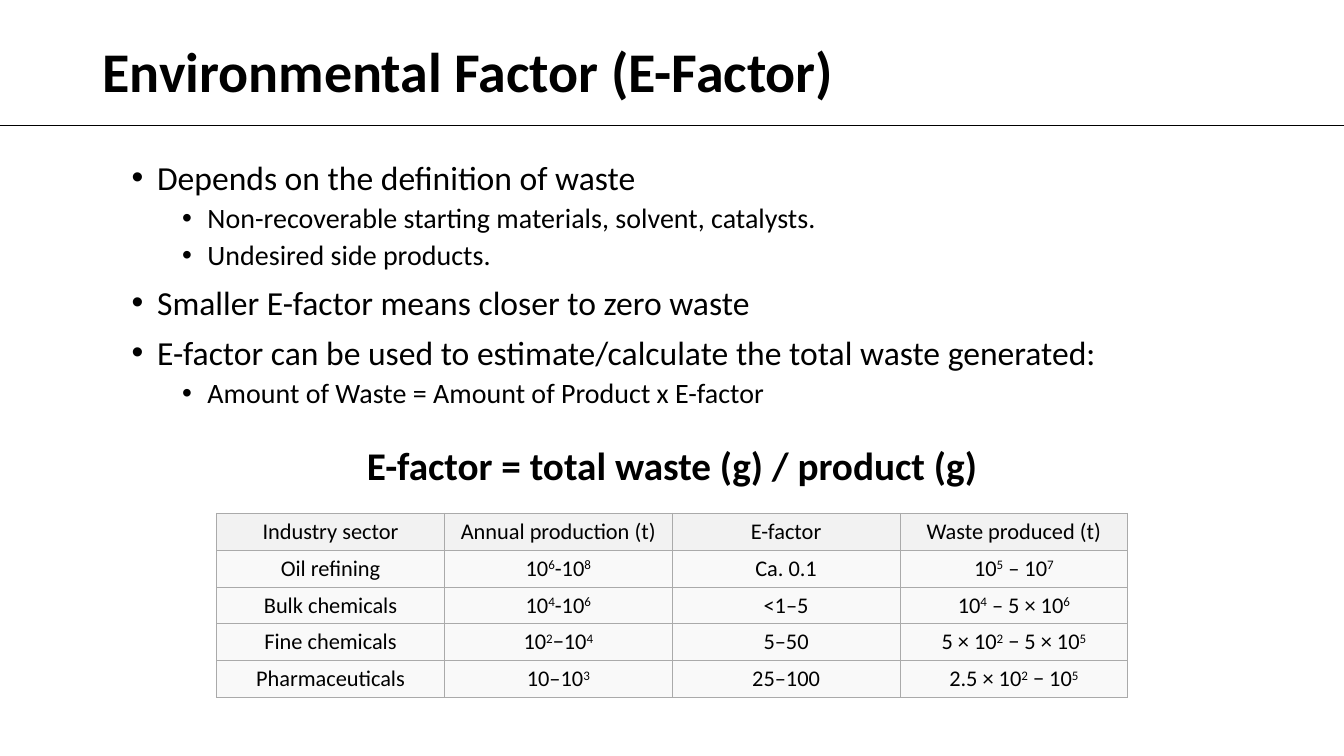
from dataclasses import dataclass

from lxml.etree import SubElement
from pptx import Presentation
from pptx.dml.color import RGBColor
from pptx.enum.shapes import MSO_CONNECTOR
from pptx.enum.text import MSO_ANCHOR, MSO_AUTO_SIZE, PP_ALIGN
from pptx.oxml.ns import qn
from pptx.util import Cm, Pt


@dataclass(frozen=True)
class Theme:
    font: str = "Calibri"
    text: str = "000000"
    header_fill: str = "F2F2F2"
    body_fill: str = "F9F9F9"
    border: str = "AAAAAA"
    title_size: int = 40
    formula_size: int = 28
    bullet_sizes: tuple = (24, 20)
    table_size: int = 16


THEME = Theme()
SLIDE_WIDTH, SLIDE_HEIGHT = Cm(33.87), Cm(19.05)
BULLET_MARGINS = (Cm(0.64), Cm(1.91))
BULLET_HANGING = Cm(0.64)
BULLET_SPACING = (Pt(10), Pt(5))
COLUMN_WIDTH, ROW_HEIGHT = Cm(5.74), Cm(0.93)

BULLETS = [
    (0, "Depends on the definition of waste"),
    (1, "Non-recoverable starting materials, solvent, catalysts."),
    (1, "Undesired side products."),
    (0, "Smaller E-factor means closer to zero waste"),
    (0, "E-factor can be used to estimate/calculate the total waste generated:"),
    (1, "Amount of Waste = Amount of Product x E-factor"),
]

# Exponents stand between carets.
SECTORS = [
    ("Industry sector", "Annual production (t)", "E-factor", "Waste produced (t)"),
    ("Oil refining", "10^6^-10^8^", "Ca. 0.1", "10^5^ – 10^7^"),
    ("Bulk chemicals", "10^4^-10^6^", "<1–5", "10^4^ – 5 × 10^6^"),
    ("Fine chemicals", "10^2^−10^4^", "5–50", "5 × 10^2^ − 5 × 10^5^"),
    ("Pharmaceuticals", "10–10^3^", "25–100", "2.5 × 10^2^ − 10^5^"),
]


def style_paragraph(paragraph, size, bold=False, alignment=PP_ALIGN.LEFT):
    paragraph.alignment = alignment
    font = paragraph.font
    font.name, font.size, font.bold = THEME.font, Pt(size), bold
    font.color.rgb = RGBColor.from_string(THEME.text)


def add_bullet(paragraph, level):
    properties = paragraph._p.get_or_add_pPr()
    properties.set("marL", str(BULLET_MARGINS[level]))
    properties.set("indent", str(-BULLET_HANGING))
    SubElement(properties, qn("a:buFont"), typeface="Arial")
    SubElement(properties, qn("a:buChar"), char="•")


def add_exponent_text(paragraph, text):
    """Write text as runs, raising the parts between carets."""
    for index, part in enumerate(text.split("^")):
        if part:
            run = paragraph.add_run()
            run.text = part
            if index % 2:
                run._r.get_or_add_rPr().set("baseline", "30000")


def add_borders(cell):
    properties = cell._tc.get_or_add_tcPr()
    for side in ("lnL", "lnR", "lnT", "lnB"):
        line = SubElement(properties, qn(f"a:{side}"), w=str(Pt(0.6)))
        fill = SubElement(line, qn("a:solidFill"))
        SubElement(fill, qn("a:srgbClr"), val=THEME.border)


def add_text_frame(slide, left, top, width, height):
    text_frame = slide.shapes.add_textbox(left, top, width, height).text_frame
    text_frame.word_wrap = True
    return text_frame


def format_title(slide, text):
    title = slide.shapes.title
    title.left, title.top, title.width, title.height = Cm(2.33), Cm(0.03), Cm(29.21), Cm(3.68)
    text_frame = title.text_frame
    text_frame.text = text
    text_frame.auto_size = MSO_AUTO_SIZE.NONE
    text_frame.vertical_anchor = MSO_ANCHOR.MIDDLE
    paragraph = text_frame.paragraphs[0]
    paragraph.line_spacing = 0.9
    style_paragraph(paragraph, THEME.title_size, bold=True)


def add_title_rule(slide):
    top = Cm(3.15)
    rule = slide.shapes.add_connector(MSO_CONNECTOR.STRAIGHT, 0, top, SLIDE_WIDTH, top)
    rule.line.color.rgb = RGBColor.from_string(THEME.text)
    rule.line.width = Pt(0.5)
    SubElement(rule._element.spPr, qn("a:effectLst"))


def add_bullet_list(slide, bullets):
    text_frame = add_text_frame(slide, Cm(3.07), Cm(3.94), Cm(24.87), Cm(6.58))
    for index, (level, text) in enumerate(bullets):
        paragraph = text_frame.add_paragraph() if index else text_frame.paragraphs[0]
        paragraph.text = text
        paragraph.level = level
        paragraph.line_spacing = 0.9
        paragraph.space_before = BULLET_SPACING[level] if index else Pt(0)
        add_bullet(paragraph, level)
        style_paragraph(paragraph, THEME.bullet_sizes[level])


def add_formula(slide, text):
    text_frame = add_text_frame(slide, Cm(8.47), Cm(11), Cm(16.93), Cm(1.45))
    paragraph = text_frame.paragraphs[0]
    paragraph.text = text
    style_paragraph(paragraph, THEME.formula_size, bold=True, alignment=PP_ALIGN.CENTER)


def fill_cell(cell, text, fill):
    cell.vertical_anchor = MSO_ANCHOR.MIDDLE
    cell.margin_top = cell.margin_bottom = Cm(0.1)
    add_borders(cell)
    cell.fill.solid()
    cell.fill.fore_color.rgb = RGBColor.from_string(fill)
    paragraph = cell.text_frame.paragraphs[0]
    add_exponent_text(paragraph, text)
    style_paragraph(paragraph, THEME.table_size, alignment=PP_ALIGN.CENTER)


def add_sector_table(slide, rows):
    row_count, column_count = len(rows), len(rows[0])
    table = slide.shapes.add_table(
        row_count, column_count, Cm(5.46), Cm(12.93),
        COLUMN_WIDTH * column_count, ROW_HEIGHT * row_count,
    ).table
    table.horz_banding = table.first_row = False
    for row_index, row in enumerate(rows):
        fill = THEME.body_fill if row_index else THEME.header_fill
        for column_index, text in enumerate(row):
            fill_cell(table.cell(row_index, column_index), text, fill)


def main():
    presentation = Presentation()
    presentation.slide_width, presentation.slide_height = SLIDE_WIDTH, SLIDE_HEIGHT
    title_only = presentation.slide_layouts.get_by_name("Title Only")
    slide = presentation.slides.add_slide(title_only)
    format_title(slide, "Environmental Factor (E-Factor)")
    add_title_rule(slide)
    add_bullet_list(slide, BULLETS)
    add_formula(slide, "E-factor = total waste (g) / product (g)")
    add_sector_table(slide, SECTORS)
    presentation.save("out.pptx")


if __name__ == "__main__":
    main()
